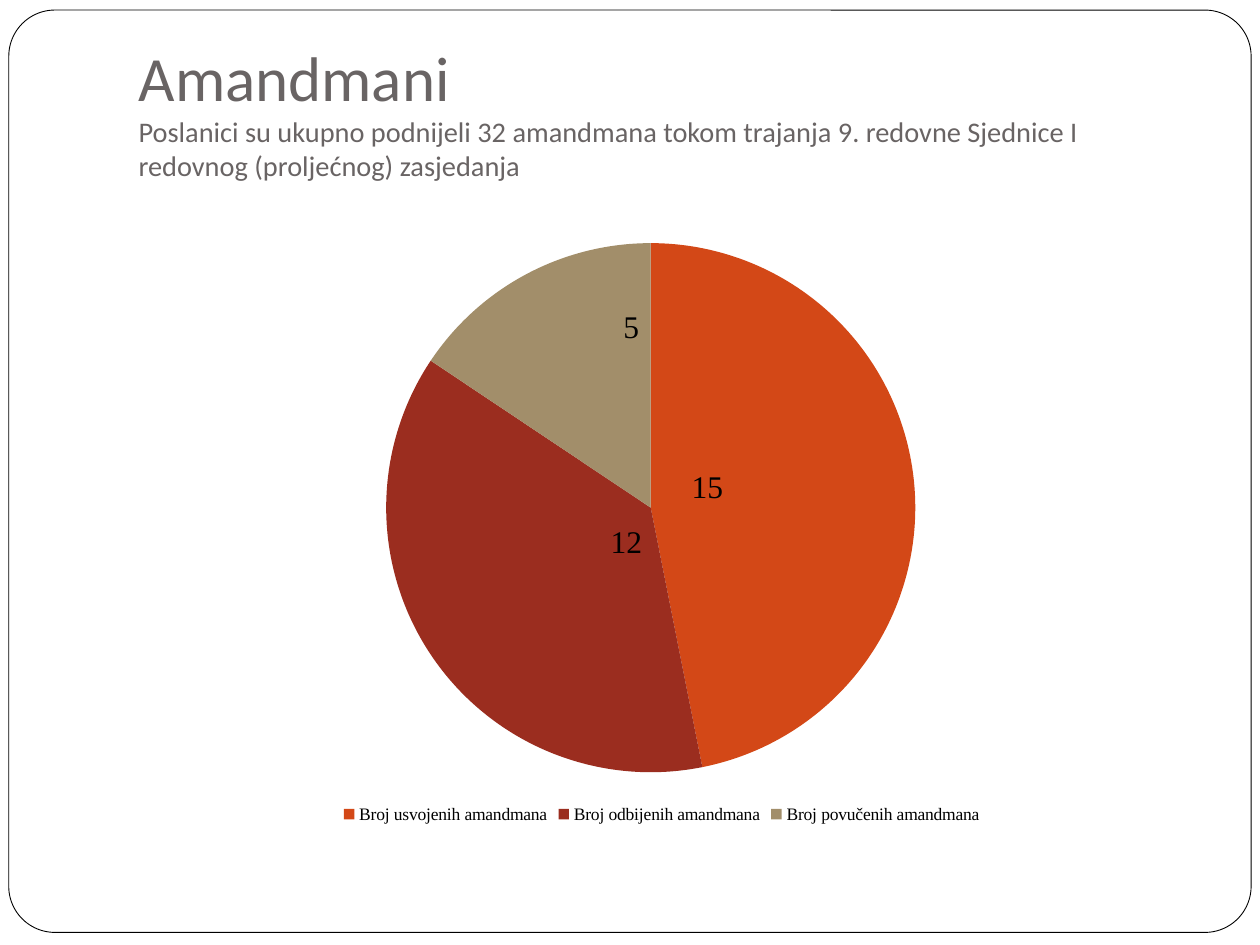
"""Build a slide with a pie chart of amendments by outcome."""
from lxml import etree
from pptx import Presentation
from pptx.chart.data import CategoryChartData
from pptx.dml.color import RGBColor
from pptx.enum.chart import XL_CHART_TYPE, XL_LABEL_POSITION, XL_LEGEND_POSITION
from pptx.enum.shapes import MSO_SHAPE
from pptx.enum.text import MSO_ANCHOR, MSO_AUTO_SIZE, PP_ALIGN
from pptx.oxml.ns import qn
from pptx.util import Inches, Pt

PIE = XL_CHART_TYPE.PIE
CENTER = XL_LABEL_POSITION.CENTER
BOTTOM = XL_LEGEND_POSITION.BOTTOM
ROUND = MSO_SHAPE.ROUNDED_RECTANGLE

WHITE = RGBColor(0xFF, 0xFF, 0xFF)
BLACK = RGBColor(0, 0, 0)
GRAY = RGBColor(0x69, 0x64, 0x64)
ORANGE = RGBColor(0xD3, 0x48, 0x17)
RED = RGBColor(0x9B, 0x2D, 0x1F)
TAN = RGBColor(0xA2, 0x8E, 0x6A)

TITLE = [
    ("Amandmani ", 36),
    ("Poslanici su ukupno podnijeli 32 amandmana tokom trajanja 9. redovne "
     "Sjednice I redovnog (proljećnog) zasjedanja", 16.2),
]
SLICES = [
    ("Broj usvojenih amandmana", 15, ORANGE, (-0.07, -0.01)),
    ("Broj odbijenih amandmana", 12, RED, (0.08, -0.06)),
    ("Broj povučenih amandmana", 5, TAN, (0.04, -0.1)),
]
PLOT = {"layoutTarget": "inner", "xMode": "edge", "yMode": "edge",
        "x": 0.24, "y": 0.07, "w": 0.5, "h": 0.84}


def box(*sides):
    return [Inches(side) for side in sides]


def layout(values):
    node = etree.Element(qn("c:layout"))
    manual = etree.SubElement(node, qn("c:manualLayout"))
    for name, value in values.items():
        etree.SubElement(manual, qn("c:" + name)).set("val", str(value))
    return node


def add_frame(slide):
    frame = slide.shapes.add_shape(ROUND, *box(0.07, 0.08, 9.86, 7.32))
    frame.adjustments[0] = 0.05
    frame.shadow.inherit = False
    frame.fill.solid()
    frame.fill.fore_color.rgb = WHITE
    frame.line.color.rgb = BLACK
    frame.line.width = Pt(0.5)
    slide.shapes.title._element.addprevious(frame._element)


def fill_title(title):
    title.left, title.top, title.width, title.height = box(1, 0.3, 8.5, 1.25)
    text = title.text_frame
    text.word_wrap = True
    text.auto_size = MSO_AUTO_SIZE.NONE
    text.vertical_anchor = MSO_ANCHOR.BOTTOM
    text.margin_bottom = Inches(0.1)
    para = text.paragraphs[0]
    para.alignment = PP_ALIGN.LEFT
    for i, (words, size) in enumerate(TITLE):
        if i:
            para.add_line_break()
        run = para.add_run()
        run.text = words
        run.font.name = "Calibri"
        run.font.size = Pt(size)
        run.font.color.rgb = GRAY


def add_pie(slide):
    data = CategoryChartData()
    data.categories = [part[0] for part in SLICES]
    data.add_series("Series 1", [part[1] for part in SLICES])
    chart = slide.shapes.add_chart(PIE, *box(1, 1.58, 8.5, 5), data).chart
    chart.has_title = False
    chart.font.name = "Times New Roman"
    chart.font.size = Pt(10)
    chart.font.color.rgb = BLACK
    chart.has_legend = True
    chart.legend.position = BOTTOM
    chart.legend.include_in_layout = False

    plot = chart.plots[0]
    plot.vary_by_categories = True
    area = chart._chartSpace.find(".//" + qn("c:plotArea"))
    for old in area.findall(qn("c:layout")):
        area.remove(old)
    area.insert(0, layout(PLOT))

    for i, (_, _, color, (x, y)) in enumerate(SLICES):
        point = plot.series[0].points[i]
        point.format.fill.solid()
        point.format.fill.fore_color.rgb = color
        label = point.data_label
        label.position = CENTER
        label.font.size = Pt(18)
        label.font.name = "Times New Roman"
        label.font.color.rgb = BLACK
    for node, part in zip(area.iter(qn("c:dLbl")), SLICES):
        x, y = part[3]
        node.find(qn("c:idx")).addnext(layout({"x": x, "y": y}))


def main():
    deck = Presentation()
    deck.slide_width, deck.slide_height = box(10, 7.5)
    slide = deck.slides.add_slide(deck.slide_layouts[5])
    fill_title(slide.shapes.title)
    add_frame(slide)
    add_pie(slide)
    deck.save("out.pptx")


if __name__ == "__main__":
    main()
